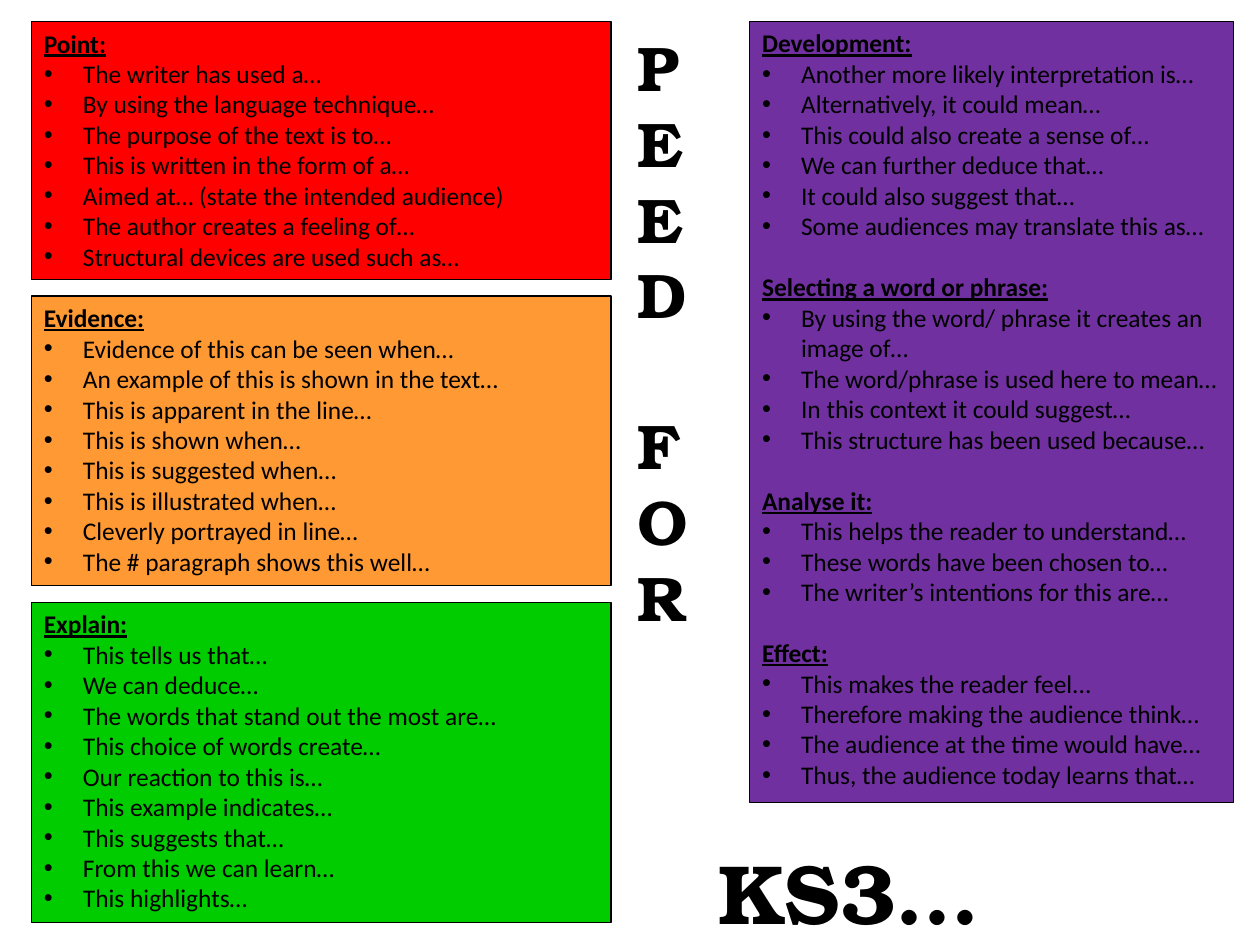
"""Build the PEED FOR sentence starter slide."""
from lxml.etree import SubElement as Sub
from pptx import Presentation
from pptx.dml.color import RGBColor as RGB
from pptx.enum.shapes import MSO_SHAPE as Shape
from pptx.enum.text import MSO_ANCHOR as Anchor, MSO_AUTO_SIZE as Fit, PP_ALIGN as Align
from pptx.oxml.ns import qn
from pptx.util import Inches, Pt


def tint(code):
    return RGB.from_string(code)


def style(run, **form):
    for key, val in form.items():
        setattr(run.font, key, val)
    run.font.color.rgb = tint("000000")


deck = Presentation()
deck.slide_width, deck.slide_height = Inches(10), Inches(7.5)
slide = deck.slides.add_slide(deck.slide_layouts[6])

cards = [
    ("FF0000", (0.25, 0.17, 4.6, 2.05), {
        "Point:": [
            "The writer has used a…",
            "By using the language technique…",
            "The purpose of the text is to…",
            "This is written in the form of a…",
            "Aimed at… (state the intended audience)",
            "The author creates a feeling of…",
            "Structural devices are used such as…",
        ],
    }),
    ("FF9933", (0.25, 2.35, 4.6, 2.3), {
        "Evidence:": [
            "Evidence of this can be seen when…",
            "An example of this is shown in the text…",
            "This is apparent in the line…",
            "This is shown when…",
            "This is suggested when…",
            "This is illustrated when…",
            "Cleverly portrayed in line…",
            "The # paragraph shows this well…",
        ],
    }),
    ("00CC00", (0.25, 4.78, 4.6, 2.54), {
        "Explain:": [
            "This tells us that…",
            "We can deduce…",
            "The words that stand out the most are…",
            "This choice of words create…",
            "Our reaction to this is…",
            "This example indicates…",
            "This suggests that…",
            "From this we can learn…",
            "This highlights…",
        ],
    }),
    ("7030A0", (5.95, 0.17, 3.84, 6.2), {
        "Development:": [
            "Another more likely interpretation is…",
            "Alternatively, it could mean…",
            "This could also create a sense of…",
            "We can further deduce that…",
            "It could also suggest that…",
            "Some audiences may translate this as…",
        ],
        "Selecting a word or phrase:": [
            "By using the word/ phrase it creates an image of…",
            "The word/phrase is used here to mean…",
            "In this context it could suggest…",
            "This structure has been used because…",
        ],
        "Analyse it:": [
            "This helps the reader to understand…",
            "These words have been chosen to…",
            "The writer’s intentions for this are…",
        ],
        "Effect:": [
            "This makes the reader feel...",
            "Therefore making the audience think…",
            "The audience at the time would have…",
            "Thus, the audience today learns that…",
        ],
    }),
]

for color, place, parts in cards:
    card = slide.shapes.add_shape(Shape.RECTANGLE, *map(Inches, place))
    card.shadow.inherit = False
    card.fill.solid()
    card.fill.fore_color.rgb = tint(color)
    card.line.color.rgb = tint("000000")
    card.line.width = Pt(0.75)
    frame = card.text_frame
    frame.word_wrap = True
    frame.auto_size = Fit.SHAPE_TO_FIT_TEXT
    frame.vertical_anchor = Anchor.TOP
    para = frame.paragraphs[0]
    for head, lines in parts.items():
        if para.runs:
            para = frame.add_paragraph()
            para.space_before = Pt(17.5)
        para.alignment = Align.LEFT
        run = para.add_run()
        run.text = head
        style(run, name="Calibri", size=Pt(14.5), bold=True, underline=True)
        for line in lines:
            para = frame.add_paragraph()
            para.alignment = Align.LEFT
            props = para._p.get_or_add_pPr()
            props.set("marL", str(Inches(0.31)))
            props.set("indent", str(Inches(-0.31)))
            Sub(props, qn("a:buFont")).set("typeface", "Arial")
            Sub(props, qn("a:buChar")).set("char", "•")
            run = para.add_run()
            run.text = line
            style(run, name="Calibri", size=Pt(14.5), bold=False)

titles = [
    ("PEED FOR", (4.96, 0.18, 0.88, 6.4), 0, "wordArtVert", 36, Align.LEFT),
    ("KS3…", (5.66, 5.36, 1.01, 3.42), 270, "vert", 48, Align.RIGHT),
]
for text, place, turn, flow, size, side in titles:
    box = slide.shapes.add_textbox(*map(Inches, place))
    box.rotation = turn
    frame = box.text_frame
    frame.word_wrap = True
    frame.auto_size = Fit.SHAPE_TO_FIT_TEXT
    frame.vertical_anchor = Anchor.MIDDLE
    frame._txBody.bodyPr.set("vert", flow)
    para = frame.paragraphs[0]
    para.alignment = side
    run = para.add_run()
    run.text = text
    style(run, name="TeX Gyre Bonum", size=Pt(size), bold=True)

deck.save("out.pptx")
